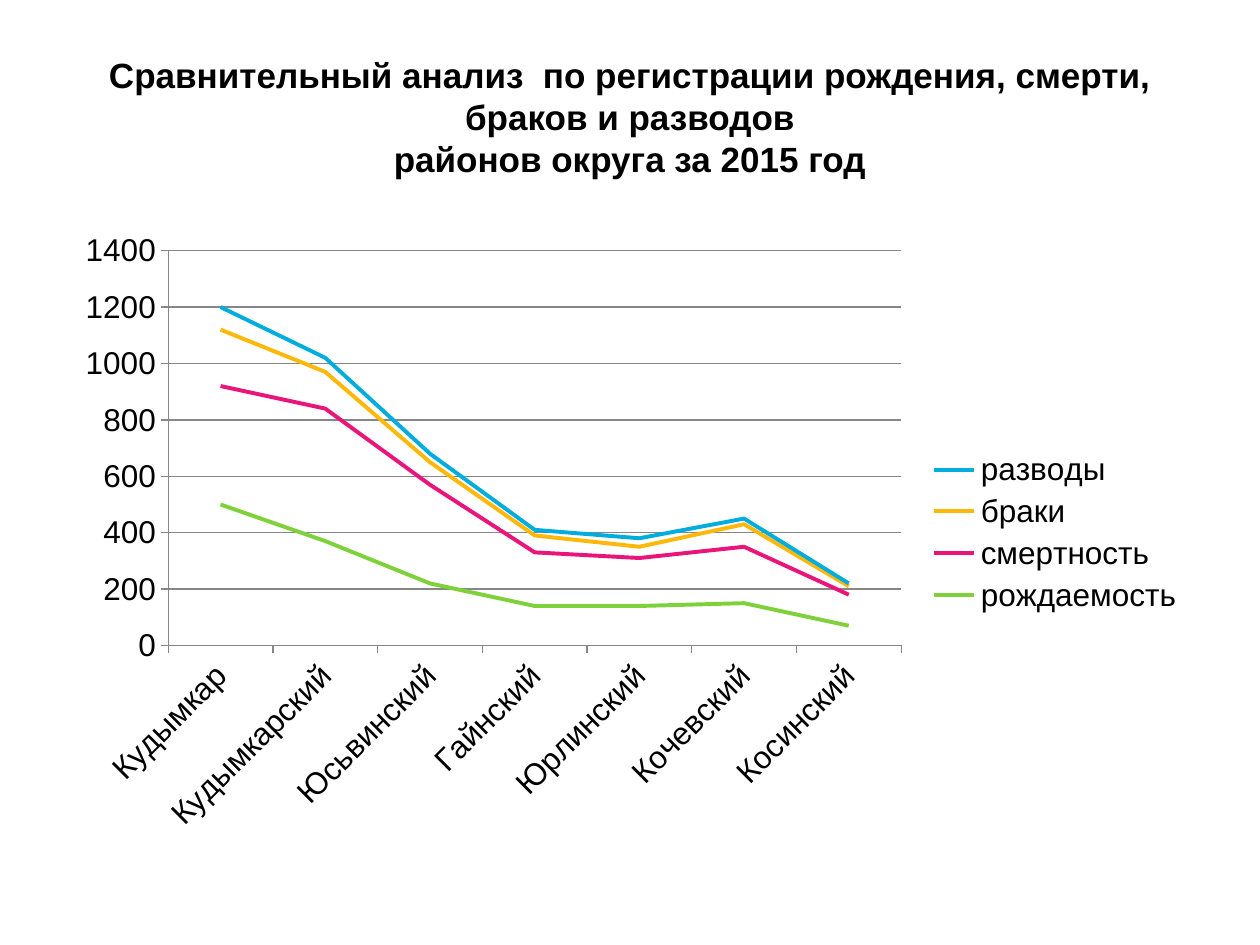
from dataclasses import dataclass

import pptx
import pptx.chart.data
import pptx.dml.color
import pptx.enum.chart
import pptx.enum.text
import pptx.util
from pptx.util import Inches


@dataclass(frozen=True)
class Theme:
    font: str = "Arial"
    ink: str = "000000"
    grid: str = "868686"
    head: int = 20
    body: int = 18
    line: float = 2.25
    hair: float = 0.75


THEME = Theme()

TITLE = ("Сравнительный анализ  по регистрации рождения, смерти, "
         "браков и разводов\vрайонов округа за 2015 год")
AREAS = ["Кудымкар", "Кудымкарский", "Юсьвинский", "Гайнский",
         "Юрлинский", "Кочевский", "Косинский"]
# Name, colour, values by area
EVENTS = [
    ("рождаемость", "7FD13B", [500, 370, 220, 140, 140, 150, 70]),
    ("смертность", "EA157A", [420, 470, 350, 190, 170, 200, 110]),
    ("браки", "FEB80A", [200, 130, 80, 60, 40, 80, 30]),
    ("разводы", "00ADDC", [80, 50, 30, 20, 30, 20, 10]),
]


def set_font(font, size, bold=False):
    font.name = THEME.font
    font.size = pptx.util.Pt(size)
    font.bold = bold
    font.color.rgb = pptx.dml.color.RGBColor.from_string(THEME.ink)


def set_line(line, color, width):
    line.color.rgb = pptx.dml.color.RGBColor.from_string(color)
    line.width = pptx.util.Pt(width)


def add_title(slide):
    title = slide.shapes.title
    title.left, title.top = Inches(0.5), Inches(0.3)
    title.width, title.height = Inches(9), Inches(1.25)
    frame = title.text_frame
    frame.text = TITLE
    frame.word_wrap = True
    frame.auto_size = pptx.enum.text.MSO_AUTO_SIZE.NONE
    frame.vertical_anchor = pptx.enum.text.MSO_ANCHOR.MIDDLE
    para = frame.paragraphs[0]
    para.alignment = pptx.enum.text.PP_ALIGN.CENTER
    for run in para.runs:
        set_font(run.font, THEME.head, bold=True)


def style_axis(axis):
    axis.major_tick_mark = pptx.enum.chart.XL_TICK_MARK.OUTSIDE
    axis.minor_tick_mark = pptx.enum.chart.XL_TICK_MARK.NONE
    set_font(axis.tick_labels.font, THEME.body)
    set_line(axis.format.line, THEME.grid, THEME.hair)


def add_chart(slide):
    data = pptx.chart.data.CategoryChartData()
    data.categories = AREAS
    for name, _, values in EVENTS:
        data.add_series(name, values)
    chart = slide.shapes.add_chart(
        pptx.enum.chart.XL_CHART_TYPE.LINE_STACKED,
        Inches(0.5), Inches(1.75), Inches(9), Inches(4.95), data).chart
    chart.has_title = False
    set_font(chart.font, THEME.body)

    # Axes: slanted area names, fixed scale
    areas, scale = chart.category_axis, chart.value_axis
    for axis in (areas, scale):
        style_axis(axis)
    areas.tick_labels.font._element.getparent().getparent().getparent() \
        .find(pptx.oxml.ns.qn("a:bodyPr")).set("rot", "-2700000")
    scale.minimum_scale, scale.maximum_scale = 0, 1400
    scale.major_unit = 200
    scale.has_major_gridlines = True
    set_line(scale.major_gridlines.format.line, THEME.grid, THEME.hair)

    # Lines
    plot = chart.plots[0]
    plot.vary_by_categories = False
    for series, (_, color, _) in zip(plot.series, EVENTS):
        series.smooth = False
        series.marker.style = pptx.enum.chart.XL_MARKER_STYLE.NONE
        set_line(series.format.line, color, THEME.line)

    # Legend
    chart.has_legend = True
    chart.legend.position = pptx.enum.chart.XL_LEGEND_POSITION.RIGHT
    chart.legend.include_in_layout = False
    set_font(chart.legend.font, THEME.body)


def main():
    deck = pptx.Presentation()
    deck.slide_width, deck.slide_height = Inches(10), Inches(7.5)
    slide = deck.slides.add_slide(deck.slide_layouts[5])
    add_title(slide)
    add_chart(slide)
    deck.save("out.pptx")


if __name__ == "__main__":
    main()
